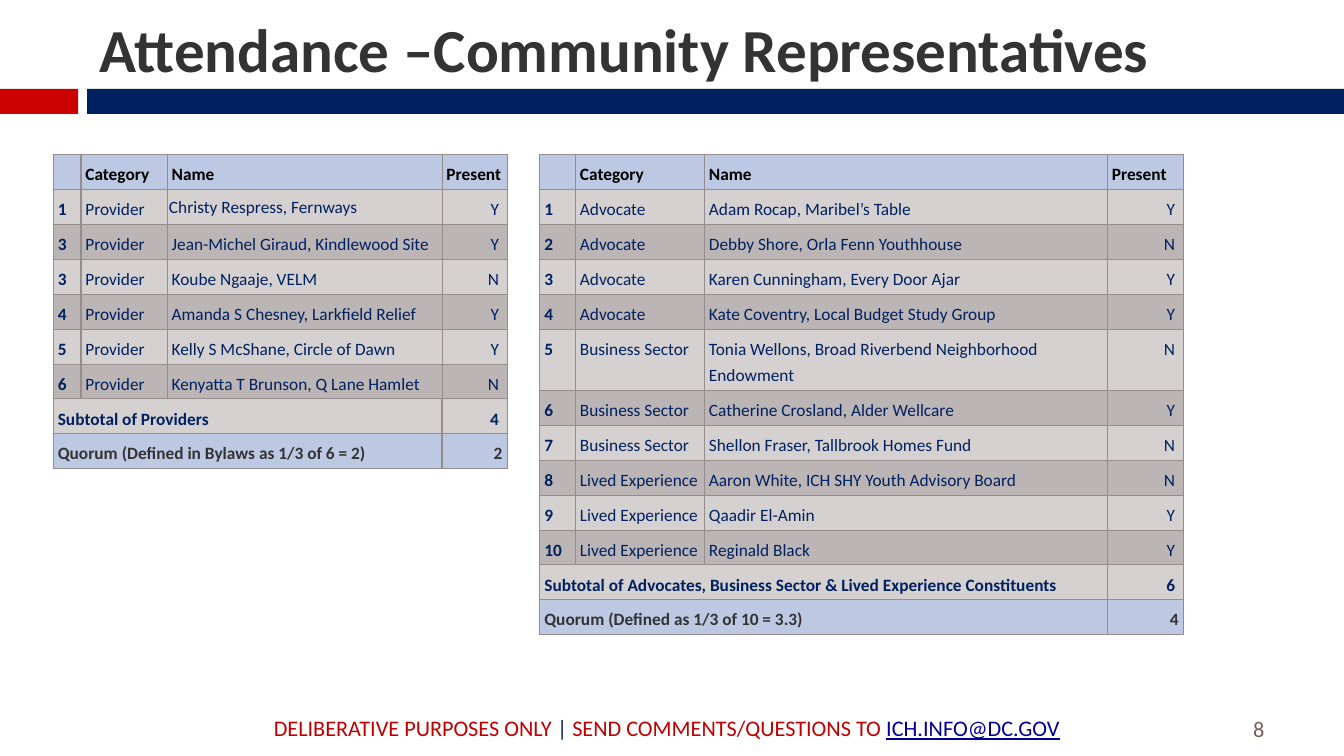
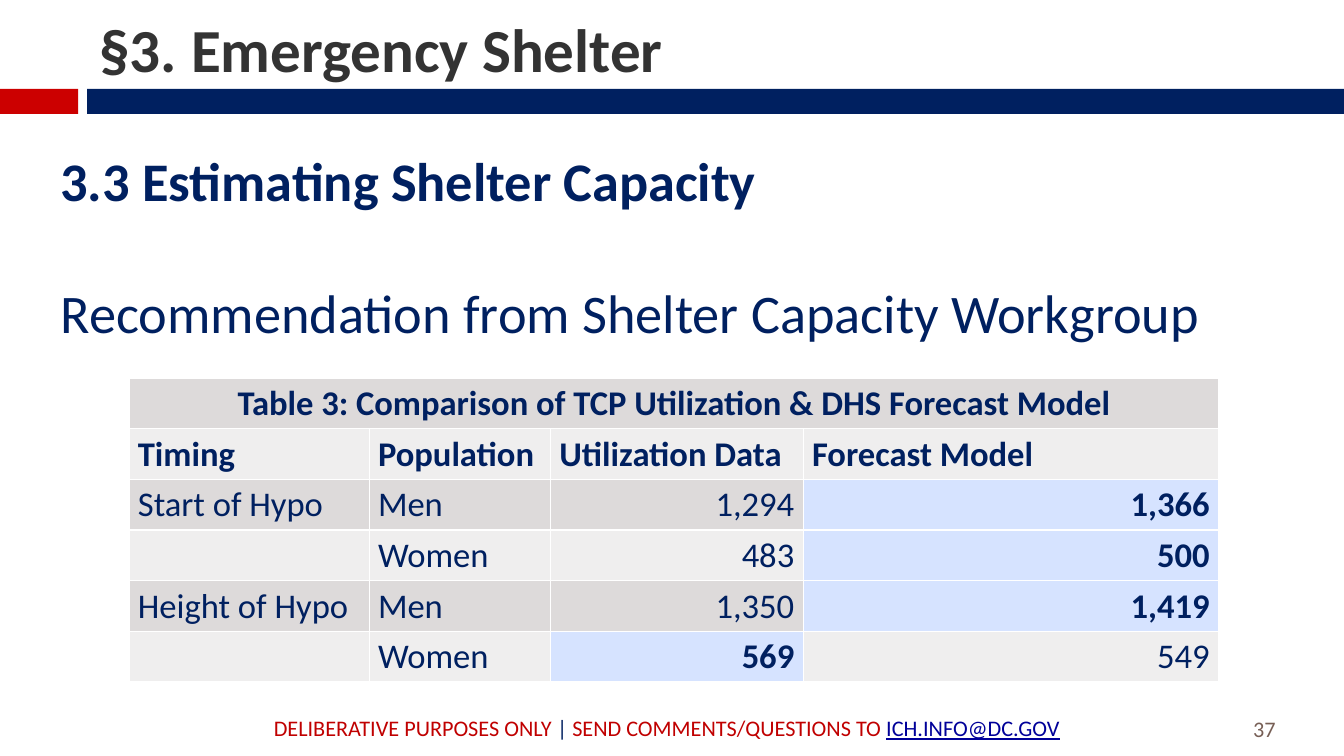
from dataclasses import dataclass

from lxml import etree
from pptx import Presentation
from pptx import util as u
from pptx.dml.color import RGBColor
from pptx.enum import shapes, text
from pptx.oxml.ns import qn

LEFT, CENTER, RIGHT = text.PP_ALIGN.LEFT, text.PP_ALIGN.CENTER, text.PP_ALIGN.RIGHT


@dataclass(frozen=True)
class Theme:
    font: str = "Calibri"
    navy: str = "002060"
    red: str = "CC0000"
    footer_red: str = "C00000"
    link: str = "000099"
    charcoal: str = "333333"
    brown: str = "775F55"
    black: str = "000000"
    white: str = "FFFFFF"
    rule: str = "968C8C"
    roster_head: str = "BDC8E3"
    roster_light: str = "D5D1D1"
    roster_dark: str = "BCB5B5"
    band_light: str = "EFEEEE"
    band_dark: str = "DDDADA"
    highlight: str = "D6E3FF"
    title_size: float = 49.5
    body_size: float = 44
    table_size: float = 28
    footer_size: float = 18
    roster_size: float = 14


THEME = Theme()


@dataclass
class Cell:
    text: str = ""
    fill: str = THEME.white
    color: str = THEME.navy
    bold: bool = False
    align: int = LEFT
    span: int = 1
    right_inset: float = 0


def write(para, words, *, size, color, bold=False, underline=False,
          align=LEFT, spacing=None, before=0):
    """Append one formatted span to a paragraph."""
    para.alignment = align
    para.space_before = u.Pt(before)
    if spacing:
        para.line_spacing = spacing
    if not words:
        etree.SubElement(para._p, qn("a:endParaRPr"), sz=str(round(size * 100)))
        return
    span = para.add_run()
    span.text = words
    font = span.font
    font.name, font.size = THEME.font, u.Pt(size)
    font.bold, font.underline = bold, underline
    font.color.rgb = RGBColor.from_string(color)


def set_insets(cell, side, end, right=None):
    cell.margin_left, cell.margin_right = u.Inches(side), u.Inches(right or side)
    cell.margin_top = cell.margin_bottom = u.Inches(end)


def set_borders(cell, color, widths):
    """Draw the left, right, top and bottom edges, with widths in points."""
    props = cell._tc.get_or_add_tcPr()
    for index, (edge, width) in enumerate(zip(("lnL", "lnR", "lnT", "lnB"), widths)):
        line = etree.Element(qn("a:" + edge), w=str(u.Pt(width)))
        fill = etree.SubElement(line, qn("a:solidFill"))
        etree.SubElement(fill, qn("a:srgbClr"), val=color)
        props.insert(index, line)


class Deck:
    def __init__(self, theme):
        self.theme = theme
        self.file = Presentation()
        self.file.slide_width = u.Inches(15.11)
        self.file.slide_height = u.Inches(8.5)
        self.page = None

    def new_page(self, title, number, layout):
        theme = self.theme
        self.page = self.file.slides.add_slide(self.file.slide_layouts.get_by_name(layout))
        self.band(0, 0.88, theme.red)
        self.band(0.98, 14.13, theme.navy)
        self.text_box(2.98, 7.98, 9.42, 0.4, [
            ("DELIBERATIVE PURPOSES ONLY ", theme.footer_red, False),
            ("| ", theme.navy, False),
            ("SEND COMMENTS/QUESTIONS TO ", theme.footer_red, False),
            ("ICH.INFO@DC.GOV", theme.link, True)], text.MSO_ANCHOR.MIDDLE)
        self.text_box(13.99, 7.94, 0.75, 0.45, [(str(number), theme.brown, False)],
                      text.MSO_ANCHOR.BOTTOM)
        frame = self.placeholder(self.page.shapes.title, 1.01, 0.1, 12.29, 0.91,
                                 text.MSO_ANCHOR.BOTTOM)
        write(frame.paragraphs[0], title, size=theme.title_size,
              color=theme.charcoal, bold=True)

    def band(self, left, width, color):
        box = self.page.shapes.add_shape(
            shapes.MSO_SHAPE.RECTANGLE, u.Inches(left), u.Inches(1),
            u.Inches(width), u.Inches(0.28))
        box.shadow.inherit = False
        box.fill.solid()
        box.fill.fore_color.rgb = RGBColor.from_string(color)
        box.line.fill.background()

    def text_box(self, left, top, width, height, spans, anchor):
        box = self.page.shapes.add_textbox(
            u.Inches(left), u.Inches(top), u.Inches(width), u.Inches(height))
        frame = box.text_frame
        frame.word_wrap = True
        frame.vertical_anchor = anchor
        for words, color, underline in spans:
            write(frame.paragraphs[0], words, size=self.theme.footer_size,
                  color=color, underline=underline)

    def placeholder(self, box, left, top, width, height, anchor):
        box.left, box.top = u.Inches(left), u.Inches(top)
        box.width, box.height = u.Inches(width), u.Inches(height)
        frame = box.text_frame
        frame.word_wrap = True
        frame.auto_size = text.MSO_AUTO_SIZE.NONE
        frame.vertical_anchor = anchor
        frame.margin_left = frame.margin_right = u.Inches(0.11)
        frame.margin_top = frame.margin_bottom = u.Inches(0.06)
        return frame

    def body(self, left, top, width, height, lines):
        """Fill the body placeholder with (words, bold, space before) lines."""
        frame = self.placeholder(self.page.placeholders[1], left, top, width, height,
                                 text.MSO_ANCHOR.TOP)
        for index, (words, bold, before) in enumerate(lines):
            para = frame.add_paragraph() if index else frame.paragraphs[0]
            props = para._p.get_or_add_pPr()
            props.set("marL", "0")
            props.set("indent", "0")
            etree.SubElement(props, qn("a:buNone"))
            write(para, words, size=self.theme.body_size, color=self.theme.navy,
                  bold=bold, before=before)

    def table(self, left, top, widths, heights, rows, *, size, rule, rule_width,
              side=0.1, spacing=None, stub_width=None):
        """Draw rows of Cell; stub_width is the rule right of each row's first cell."""
        frame = self.page.shapes.add_table(
            len(rows), len(widths), u.Inches(left), u.Inches(top),
            u.Inches(sum(widths)), u.Inches(sum(heights)))
        table = frame.table
        table.first_row = table.horz_banding = False
        for column, width in zip(table.columns, widths):
            column.width = u.Inches(width)
        for row, height in zip(table.rows, heights):
            row.height = u.Inches(height)
        stub_width = stub_width or rule_width
        for r, row in enumerate(rows):
            stub_end = row[0].span
            c = 0
            for item in row:
                cell = table.cell(r, c)
                if item.span > 1:
                    cell.merge(table.cell(r, c + item.span - 1))
                set_insets(cell, side, 0.05, item.right_inset)
                write(cell.text_frame.paragraphs[0], item.text, size=size,
                      color=item.color, bold=item.bold, align=item.align,
                      spacing=spacing)
                for k in range(c, c + item.span):
                    part = table.cell(r, k)
                    part.fill.solid()
                    part.fill.fore_color.rgb = RGBColor.from_string(item.fill)
                    set_borders(part, rule, (
                        stub_width if k == stub_end else rule_width,
                        stub_width if k == stub_end - 1 else rule_width,
                        rule_width, rule_width))
                c += item.span
        return table

    def roster(self, left, widths, people, subtotal, quorum, tall_rows=()):
        """Draw an attendance table of (number, category, name, present) people."""
        theme = self.theme
        rows = [[Cell(words, theme.roster_head, theme.black, True)
                 for words in ("", "Category", "Name", "Present")]]
        for index, (number, category, name, present) in enumerate(people):
            fill = theme.roster_dark if index % 2 else theme.roster_light
            rows.append([Cell(number, fill, bold=True), Cell(category, fill),
                         Cell(name, fill),
                         Cell(present, fill, align=RIGHT, right_inset=0.09)])
        for (label, total), fill, color, inset in (
                (subtotal, theme.roster_light, theme.navy, 0.09),
                (quorum, theme.roster_head, theme.charcoal, 0.05)):
            rows.append([Cell(label, fill, color, True, span=3),
                         Cell(total, fill, color, True, RIGHT, right_inset=inset)])
        heights = [0.69 if r in tall_rows else 0.39 for r in range(len(rows))]
        return self.table(left, 1.74, widths, heights, rows, size=theme.roster_size,
                          rule=theme.rule, rule_width=0.79, side=0.05,
                          spacing=1.25, stub_width=1.5)


def attendance(deck):
    deck.new_page("Attendance –Community Representatives", 8, "Title Only")
    advocates = [
        ("Advocate", "Adam Rocap, Maribel’s Table", "Y"),
        ("Advocate", "Debby Shore, Orla Fenn Youthhouse", "N"),
        ("Advocate", "Karen Cunningham, Every Door Ajar", "Y"),
        ("Advocate", "Kate Coventry, Local Budget Study Group", "Y"),
        ("Business Sector", "Tonia Wellons, Broad Riverbend Neighborhood Endowment", "N"),
        ("Business Sector", "Catherine Crosland, Alder Wellcare", "Y"),
        ("Business Sector", "Shellon Fraser, Tallbrook Homes Fund", "N"),
        ("Lived Experience", "Aaron White, ICH SHY Youth Advisory Board", "N"),
        ("Lived Experience", "Qaadir El-Amin", "Y"),
        ("Lived Experience", "Reginald Black", "Y")]
    deck.roster(
        6.07, (0.4, 1.45, 4.53, 0.85),
        [(str(number), *person) for number, person in enumerate(advocates, 1)],
        ("Subtotal of Advocates, Business Sector & Lived Experience Constituents", "6"),
        ("Quorum (Defined as 1/3 of 10 = 3.3)", "4"), tall_rows=(5,))
    providers = [
        ("1", "Christy Respress, Fernways", "Y"),
        ("3", "Jean-Michel Giraud, Kindlewood Site", "Y"),
        ("3", "Koube Ngaaje, VELM", "N"),
        ("4", "Amanda S Chesney, Larkfield Relief", "Y"),
        ("5", "Kelly S McShane, Circle of Dawn", "Y"),
        ("6", "Kenyatta T Brunson, Q Lane Hamlet", "N")]
    table = deck.roster(
        0.6, (0.31, 0.97, 3.09, 0.73),
        [(number, "Provider", name, present) for number, name, present in providers],
        ("Subtotal of Providers", "4"),
        ("Quorum (Defined in Bylaws as 1/3 of 6 = 2)", "2"))
    set_insets(table.cell(1, 2), 0.02, 0.02)


def shelter_capacity(deck):
    theme = deck.theme
    deck.new_page("§3. Emergency Shelter", 37, "Title and Content")
    deck.body(0.57, 1.6, 14.34, 6.12, [
        ("3.3 Estimating Shelter Capacity", True, 0),
        ("Recommendation from Shelter Capacity Workgroup", False, 53.5)])
    rows = [
        [Cell("Table 3: Comparison of TCP Utilization & DHS Forecast Model",
              theme.band_dark, bold=True, align=CENTER, span=4)],
        [Cell(words, theme.band_light, bold=True) for words in
         ("Timing", "Population", "Utilization Data", "Forecast Model")]]
    records = [("Start of Hypo", "Men", "1,294", "1,366"),
               ("", "Women", "483", "500"),
               ("Height of Hypo", "Men", "1,350", "1,419"),
               ("", "Women", "569", "549")]
    for index, record in enumerate(records):
        fill = theme.band_light if index % 2 else theme.band_dark
        row = [Cell(words, fill, align=RIGHT if column > 1 else LEFT)
               for column, words in enumerate(record)]
        higher = max(row[2:], key=lambda cell: int(cell.text.replace(",", "")))
        higher.fill, higher.bold = theme.highlight, True
        rows.append(row)
    deck.table(1.45, 4.25, (2.7, 2.04, 2.84, 4.67), [0.57] * len(rows), rows,
               size=theme.table_size, rule=theme.white, rule_width=1)


def main():
    deck = Deck(THEME)
    attendance(deck)
    shelter_capacity(deck)
    deck.file.save("out.pptx")


if __name__ == "__main__":
    main()
